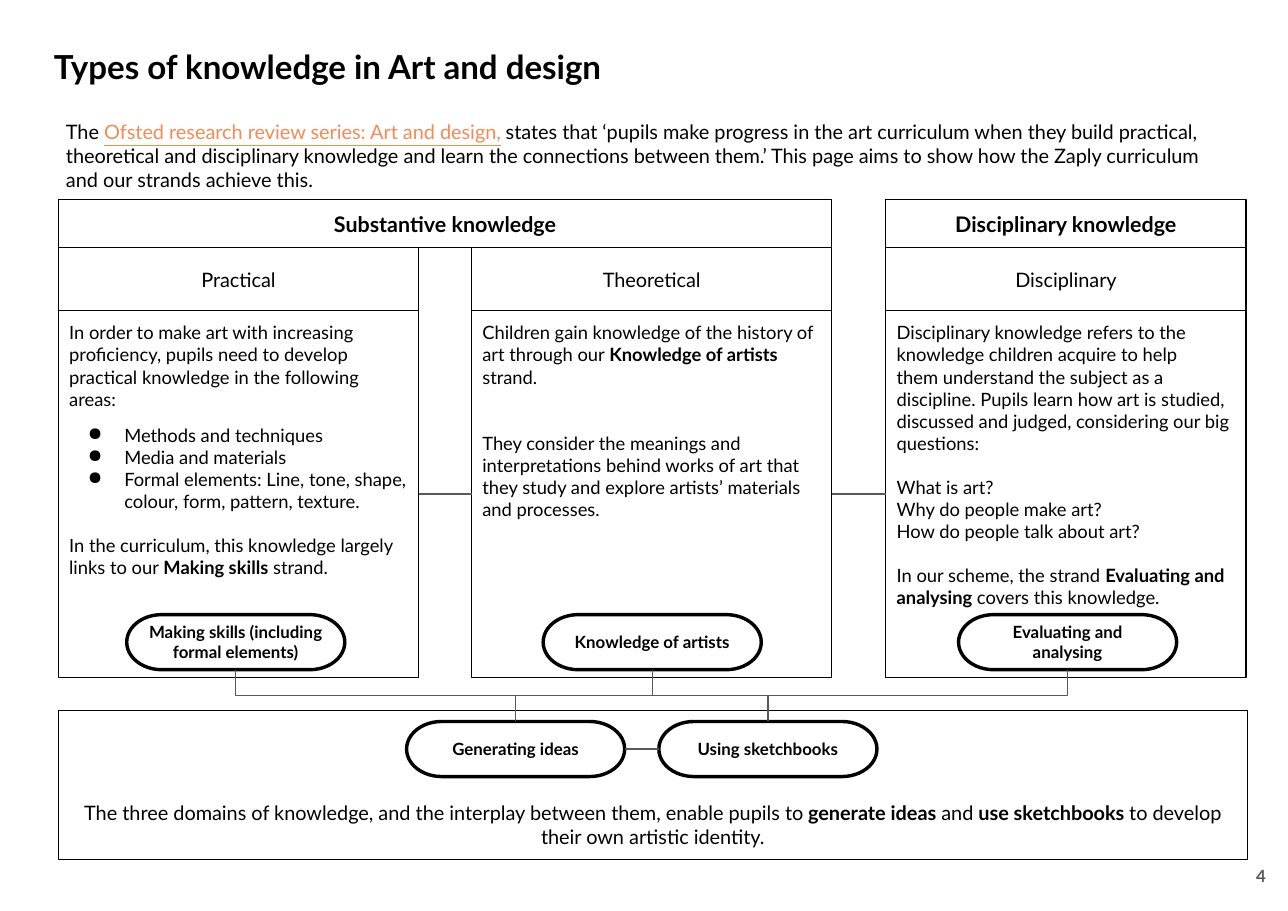
import lxml.etree
import pptx
import pptx.dml.color
import pptx.enum.shapes
import pptx.enum.text
import pptx.oxml.ns
import pptx.util

SCALE = 9144
COLOURS = {"ink": "000000", "paper": "FFFFFF", "grey": "595959", "link": "F28B57"}
ALIGN = pptx.enum.text.PP_ALIGN
ANCHOR = pptx.enum.text.MSO_ANCHOR
SHAPE = pptx.enum.shapes.MSO_SHAPE
CONNECTOR = pptx.enum.shapes.MSO_CONNECTOR
TOP, LEFT, BOTTOM, RIGHT = range(4)

COLUMN_WIDTH = 327
COLUMNS = [
    (53, 115, "Practical", "Making skills (including formal elements)", [
        ("In order to make art with increasing proficiency, pupils need to develop "
         "practical knowledge in the following areas:", 0, False),
        ("Methods and techniques", 9.6, True),
        ("Media and materials", 0, True),
        ("Formal elements: Line, tone, shape, colour, form, pattern, texture.", 0, True),
        ("In the curriculum, this knowledge largely links to our "
         "**Making skills **strand.", 14.4, False),
    ]),
    (428, 493, "Theoretical", "Knowledge of artists", [
        ("Children gain knowledge of the history of art through our "
         "**Knowledge of artists **strand.", 0, False),
        ("They consider the meanings and interpretations behind works of art that "
         "they study and explore artists’ materials and processes.", 28.8, False),
    ]),
    (804, 870, "Disciplinary", "Evaluating and analysing", [
        ("Disciplinary knowledge refers to the knowledge children acquire to help", 0, False),
        ("them understand the subject as a discipline. Pupils learn how art is studied, "
         "discussed and judged, considering our big questions:", 0, False),
        ("What is art?", 14.4, False),
        ("Why do people make art?", 0, False),
        ("How do people talk about art?", 0, False),
        ("In our scheme, the strand **Evaluating and analysing **covers this knowledge.",
         14.4, False),
    ]),
]


def px(length):
    return pptx.util.Emu(round(length * SCALE))


def colour(name):
    return pptx.dml.color.RGBColor.from_string(COLOURS[name])


class KnowledgeSlide:
    """Draws boxes, pills, text and connectors in one style on one slide."""

    def __init__(self, slide, font="Lato"):
        self.slide = slide
        self.font = font

    def fill_text(self, shape, paragraphs, size, align=ALIGN.LEFT, anchor=ANCHOR.TOP,
                  bold=False, ink="ink", inset=10):
        frame = shape.text_frame
        frame.word_wrap = True
        frame.vertical_anchor = anchor
        frame.margin_left = frame.margin_right = px(inset)
        frame.margin_top = frame.margin_bottom = px(inset)
        for index, (text, gap, bulleted) in enumerate(paragraphs):
            paragraph = frame.add_paragraph() if index else frame.paragraphs[0]
            paragraph.alignment = align
            paragraph.space_before = pptx.util.Pt(gap)
            if bulleted:
                self.bullet(paragraph)
            for part, words in enumerate(text.split("**")):
                run = paragraph.add_run()
                run.text = words
                run.font.name = self.font
                run.font.size = pptx.util.Pt(size)
                run.font.bold = bold or part % 2 == 1
                run.font.color.rgb = colour(ink)

    def bullet(self, paragraph):
        properties = paragraph._p.get_or_add_pPr()
        properties.set("marL", str(px(50)))
        properties.set("indent", str(px(-33)))
        qn = pptx.oxml.ns.qn
        tint = lxml.etree.SubElement(properties, qn("a:buClr"))
        lxml.etree.SubElement(tint, qn("a:srgbClr"), val=COLOURS["ink"])
        lxml.etree.SubElement(properties, qn("a:buChar"), char="●")

    def text(self, left, top, width, height, text, size, **style):
        shape = self.slide.shapes.add_textbox(px(left), px(top), px(width), px(height))
        self.fill_text(shape, [(text, 0, False)], size, **style)
        return shape

    def box(self, left, top, width, height, paragraphs, size,
            kind=SHAPE.RECTANGLE, weight=0.75, **style):
        shape = self.slide.shapes.add_shape(kind, px(left), px(top), px(width), px(height))
        shape.shadow.inherit = False
        shape.fill.solid()
        shape.fill.fore_color.rgb = colour("paper")
        shape.line.color.rgb = colour("ink")
        shape.line.width = pptx.util.Pt(weight)
        self.fill_text(shape, paragraphs, size, **style)
        return shape

    def label(self, left, top, width, height, text, size, **style):
        return self.box(left, top, width, height, [(text, 0, False)], size,
                        align=ALIGN.CENTER, anchor=ANCHOR.MIDDLE, **style)

    def pill(self, left, top, text):
        return self.label(left, top, 198, 50, text, 11, bold=True,
                          kind=SHAPE.FLOWCHART_TERMINATOR, weight=2.25)

    def connect(self, kind, start, start_side, end, end_side):
        connector = self.slide.shapes.add_connector(kind, 0, 0, 0, 0)
        connector.begin_connect(start, start_side)
        connector.end_connect(end, end_side)
        connector.line.color.rgb = colour("grey")
        connector.line.width = pptx.util.Pt(0.75)
        lxml.etree.SubElement(connector._element.spPr, pptx.oxml.ns.qn("a:effectLst"))
        return connector

    def line(self, start, end, start_side=RIGHT, end_side=LEFT):
        self.connect(CONNECTOR.STRAIGHT, start, start_side, end, end_side)

    def elbow(self, upper, lower):
        connector = self.connect(CONNECTOR.ELBOW, upper, BOTTOM, lower, TOP)
        start_x, end_x = connector.begin_x, connector.end_x
        start_y, end_y = connector.begin_y, connector.end_y
        drop, span = end_y - start_y, abs(end_x - start_x)
        frame = connector._element.spPr.find(pptx.oxml.ns.qn("a:xfrm"))
        frame.attrib.clear()
        connector.left = (start_x + end_x - drop) // 2
        connector.top = (start_y + end_y - span) // 2
        connector.width, connector.height = drop, span
        if end_x > start_x:
            frame.set("rot", "16200000")
            frame.set("flipH", "1")
        else:
            frame.set("rot", "5400000")


def main():
    presentation = pptx.Presentation()
    presentation.slide_width, presentation.slide_height = px(1169), px(827)
    page = KnowledgeSlide(presentation.slides.add_slide(presentation.slide_layouts[6]))

    page.box(53, 645, 1079, 135, [
        ("The three domains of knowledge, and the interplay between them, enable pupils to "
         "**generate ideas** and **use sketchbooks **to develop their own artistic identity.",
         0, False)], 13, align=ALIGN.CENTER, anchor=ANCHOR.BOTTOM)
    page.text(36, 29, 1090, 57, "Types of knowledge in Art and design", 21.6,
              bold=True, inset=13)
    page.text(1092, 764, 70, 63, "4", 11, bold=True, ink="grey", inset=13,
              align=ALIGN.RIGHT, anchor=ANCHOR.MIDDLE)

    bodies, strands = [], []
    for left, pill_left, heading, strand, paragraphs in COLUMNS:
        page.label(left, 225, COLUMN_WIDTH, 57, heading, 13, inset=12)
        bodies.append(page.box(left, 282, COLUMN_WIDTH, 333, paragraphs, 12))
        strands.append(page.pill(pill_left, 558, strand))
    page.label(53, 181, 702, 44, "Substantive knowledge", 14, bold=True)
    page.label(804, 181, COLUMN_WIDTH, 44, "Disciplinary knowledge", 14, bold=True)

    sketchbooks = page.pill(598, 655, "Using sketchbooks")
    ideas = page.pill(369, 655, "Generating ideas")
    making, artists, evaluating = strands
    for upper, lower in [(making, ideas), (evaluating, sketchbooks),
                         (artists, ideas), (artists, sketchbooks)]:
        page.elbow(upper, lower)
    page.line(sketchbooks, ideas, LEFT, RIGHT)
    for start, end in zip(bodies, bodies[1:]):
        page.line(start, end)

    intro = page.text(50, 99, 1079, 86, (
        "The **Ofsted research review series: Art and design,** states that ‘pupils make "
        "progress in the art curriculum when they build practical, theoretical and "
        "disciplinary knowledge and learn the connections between them.’ This page aims to "
        "show how the Zaply curriculum and our strands achieve this."), 13)
    link = intro.text_frame.paragraphs[0].runs[1].font
    link.bold = False
    link.underline = True
    link.color.rgb = colour("link")

    presentation.save("out.pptx")


if __name__ == "__main__":
    main()
